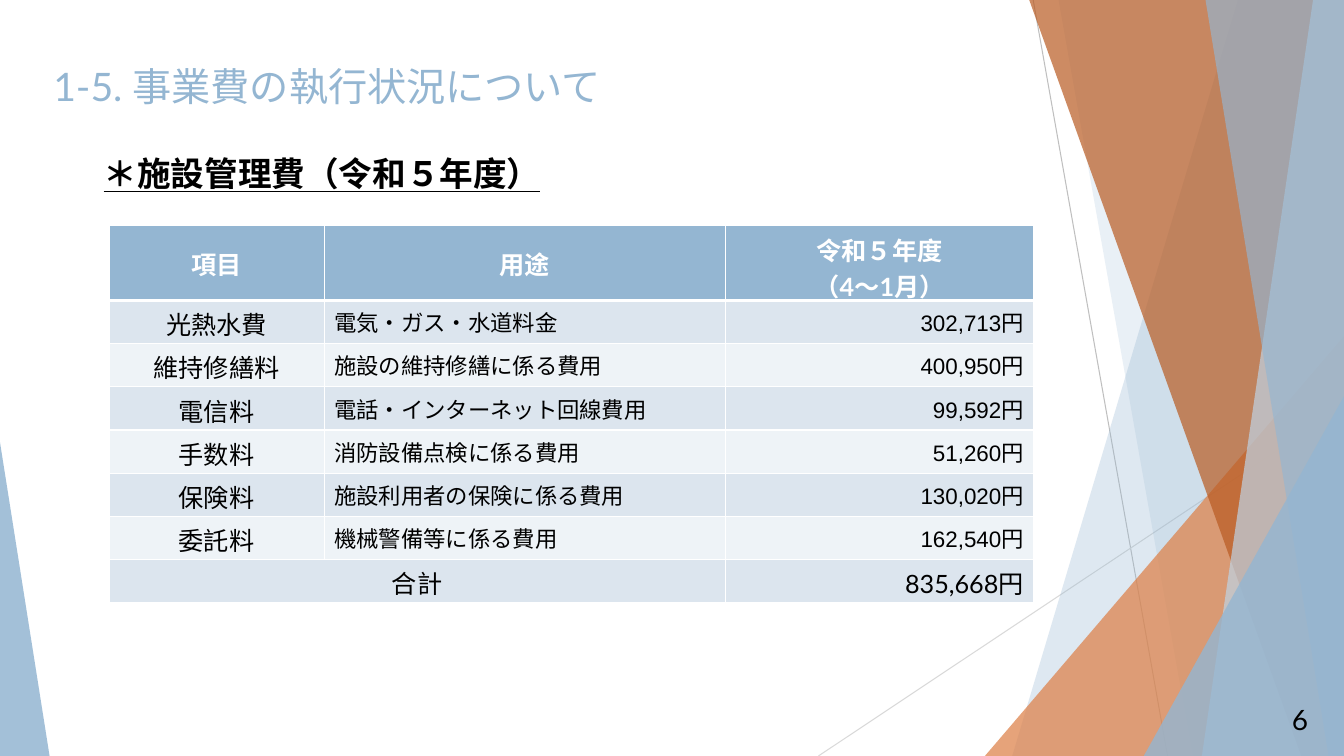
from lxml import etree
from pptx import Presentation
from pptx.dml.color import RGBColor
from pptx.enum.shapes import MSO_CONNECTOR, MSO_SHAPE
from pptx.enum.text import MSO_ANCHOR, PP_ALIGN
from pptx.oxml.ns import qn
from pptx.util import Pt

STRAIGHT = MSO_CONNECTOR.STRAIGHT
TRIANGLE = MSO_SHAPE.ISOSCELES_TRIANGLE
TOP, MIDDLE = MSO_ANCHOR.TOP, MSO_ANCHOR.MIDDLE
LEFT, CENTER, RIGHT = PP_ALIGN.LEFT, PP_ALIGN.CENTER, PP_ALIGN.RIGHT

WIDTH, HEIGHT = 960, 540
BLUE, WHITE, BLACK = "94B6D2", "FFFFFF", "000000"
BANDS = ("DCE5EE", "EEF3F7")
COLUMN_WIDTHS = (153.7, 286.6, 220.3)
HEADER_HEIGHT, ROW_HEIGHT = 53.3, 30.86
HEADERS = ("項目", "用途", "令和５年度\n（4～1月）")
EXPENSES = (
    ("光熱水費", "電気・ガス・水道料金", "302,713円"),
    ("維持修繕料", "施設の維持修繕に係る費用", "400,950円"),
    ("電信料", "電話・インターネット回線費用", "99,592円"),
    ("手数料", "消防設備点検に係る費用", "51,260円"),
    ("保険料", "施設利用者の保険に係る費用", "130,020円"),
    ("委託料", "機械警備等に係る費用", "162,540円"),
)
EXPENSE_STYLES = (
    {"align": CENTER},
    {"size": 16},
    {"size": 16, "font": "Arial", "align": RIGHT},
)
TOTAL = ("合計", "835,668円")


def color(value):
    """Turn a hex string into a colour."""
    return RGBColor.from_string(value)


def write(frame, text, size=18, font="Lato", fill=BLACK, bold=False,
          underline=False, align=LEFT, line_spacing=None, space_before=0):
    """Write text into a frame, one paragraph a line."""
    for index, line in enumerate(text.split("\n")):
        paragraph = frame.add_paragraph() if index else frame.paragraphs[0]
        paragraph.alignment = align
        paragraph.space_before = Pt(space_before)
        if line_spacing:
            paragraph.line_spacing = Pt(line_spacing)
        run = paragraph.add_run()
        run.text = line
        run.font.size = Pt(size)
        run.font.name = font
        run.font.bold = bold
        run.font.underline = underline
        run.font.color.rgb = color(fill)


def add_text(slide, box, text, anchor=TOP, **style):
    """Place a wrapped text box."""
    frame = slide.shapes.add_textbox(*map(Pt, box)).text_frame
    frame.word_wrap = True
    frame.vertical_anchor = anchor
    write(frame, text, **style)


def paint(shape, fill, opacity):
    """Give a shape a translucent fill with no outline or shadow."""
    shape.shadow.inherit = False
    shape.line.fill.background()
    shape.fill.solid()
    shape.fill.fore_color.rgb = color(fill)
    fill_color = shape._element.spPr.find(qn("a:solidFill"))[0]
    etree.SubElement(fill_color, qn("a:alpha"), val=str(opacity * 1000))


def add_hairline(slide, start, end, line_color):
    """Draw a thin straight line."""
    line = slide.shapes.add_connector(STRAIGHT, *map(Pt, start + end))
    line.line.color.rgb = color(line_color)
    line.line.width = Pt(0.75)
    etree.SubElement(line._element.spPr, qn("a:effectLst"))


def add_band(slide, right, top_left, bottom_left, fill, opacity):
    """Draw a slanted band that reaches the right edge."""
    builder = slide.shapes.build_freeform(Pt(top_left), Pt(-0.6))
    corners = ((right, -0.6), (right, HEIGHT), (bottom_left, HEIGHT))
    builder.add_line_segments([(Pt(x), Pt(y)) for x, y in corners], close=True)
    paint(builder.convert_to_shape(), fill, opacity)


def add_corner(slide, box, peak, fill, opacity):
    """Draw a right triangle with its peak at the given side."""
    triangle = slide.shapes.add_shape(TRIANGLE, *map(Pt, box))
    triangle.adjustments[0] = peak
    paint(triangle, fill, opacity)


def add_backdrop(slide, width, height):
    """Draw the facets along the slide edges."""
    add_hairline(slide, (738, 0), (834, height), "BFBFBF")
    add_hairline(slide, (width, 290), (584.6, height), "D9D9D9")
    add_band(slide, width, 884.4, 723, BLUE, 30)
    add_band(slide, width, 756, 852, BLUE, 20)
    add_corner(slide, (width - 256.5, height - 300, 256.5, 300), 1, "DD8047", 72)
    add_band(slide, width, 735, 929.5, "B95B22", 70)
    add_band(slide, width, 938, 858.5, "BFD3E4", 70)
    add_band(slide, width, 861, 949, BLUE, 65)
    add_corner(slide, (width - 143, height - 257, 143, 257), 1, BLUE, 80)
    add_corner(slide, (0, height - 224, 35.4, 224), 0, BLUE, 85)


def fill_cell(cell, text, background, bottom=1, **style):
    """Fill a cell, with white borders and its text."""
    properties = cell._tc.get_or_add_tcPr()
    for side, width in (("lnL", 1), ("lnR", 1), ("lnT", 1), ("lnB", bottom)):
        border = etree.SubElement(properties, qn("a:" + side), w=str(Pt(width)))
        solid = etree.SubElement(border, qn("a:solidFill"))
        etree.SubElement(solid, qn("a:srgbClr"), val=WHITE)
    cell.fill.solid()
    cell.fill.fore_color.rgb = color(background)
    cell.vertical_anchor = MIDDLE
    write(cell.text_frame, text, **style)


def add_expense_table(slide, left, top):
    """Build the expense table with its header and total."""
    last = len(EXPENSES) + 1
    table = slide.shapes.add_table(
        last + 1, len(COLUMN_WIDTHS), Pt(left), Pt(top),
        Pt(sum(COLUMN_WIDTHS)), Pt(HEADER_HEIGHT + ROW_HEIGHT * last)).table
    for column, width in zip(table.columns, COLUMN_WIDTHS):
        column.width = Pt(width)
    for index, row in enumerate(table.rows):
        row.height = Pt(ROW_HEIGHT if index else HEADER_HEIGHT)

    for column, header in enumerate(HEADERS):
        fill_cell(table.cell(0, column), header, BLUE, bottom=3,
                  fill=WHITE, bold=True, align=CENTER)
    for index, expense in enumerate(EXPENSES):
        for column, (text, style) in enumerate(zip(expense, EXPENSE_STYLES)):
            fill_cell(table.cell(index + 1, column), text, BANDS[index % 2], **style)
    table.cell(last, 0).merge(table.cell(last, 1))
    for column, text, align in zip((0, 2), TOTAL, (CENTER, RIGHT)):
        fill_cell(table.cell(last, column), text, BANDS[0], align=align)


def build_slide(presentation):
    """Compose the facility expense slide."""
    slide = presentation.slides.add_slide(presentation.slide_layouts[6])
    add_backdrop(slide, WIDTH, HEIGHT)
    add_text(slide, (31, 23, 828, 76.3), "1-5. 事業費の執行状況について",
             anchor=MIDDLE, size=28, fill=BLUE)
    add_text(slide, (67, 99.4, 733.7, 49), "＊施設管理費（令和５年度）", size=24,
             bold=True, underline=True, line_spacing=35, space_before=10)
    add_text(slide, (915.8, 498.2, 31, 31.7), "6", size=20)
    add_expense_table(slide, 77.8, 161.3)


def main():
    """Create and save the presentation."""
    presentation = Presentation()
    presentation.slide_width = Pt(WIDTH)
    presentation.slide_height = Pt(HEIGHT)
    build_slide(presentation)
    presentation.save("out.pptx")


if __name__ == "__main__":
    main()
